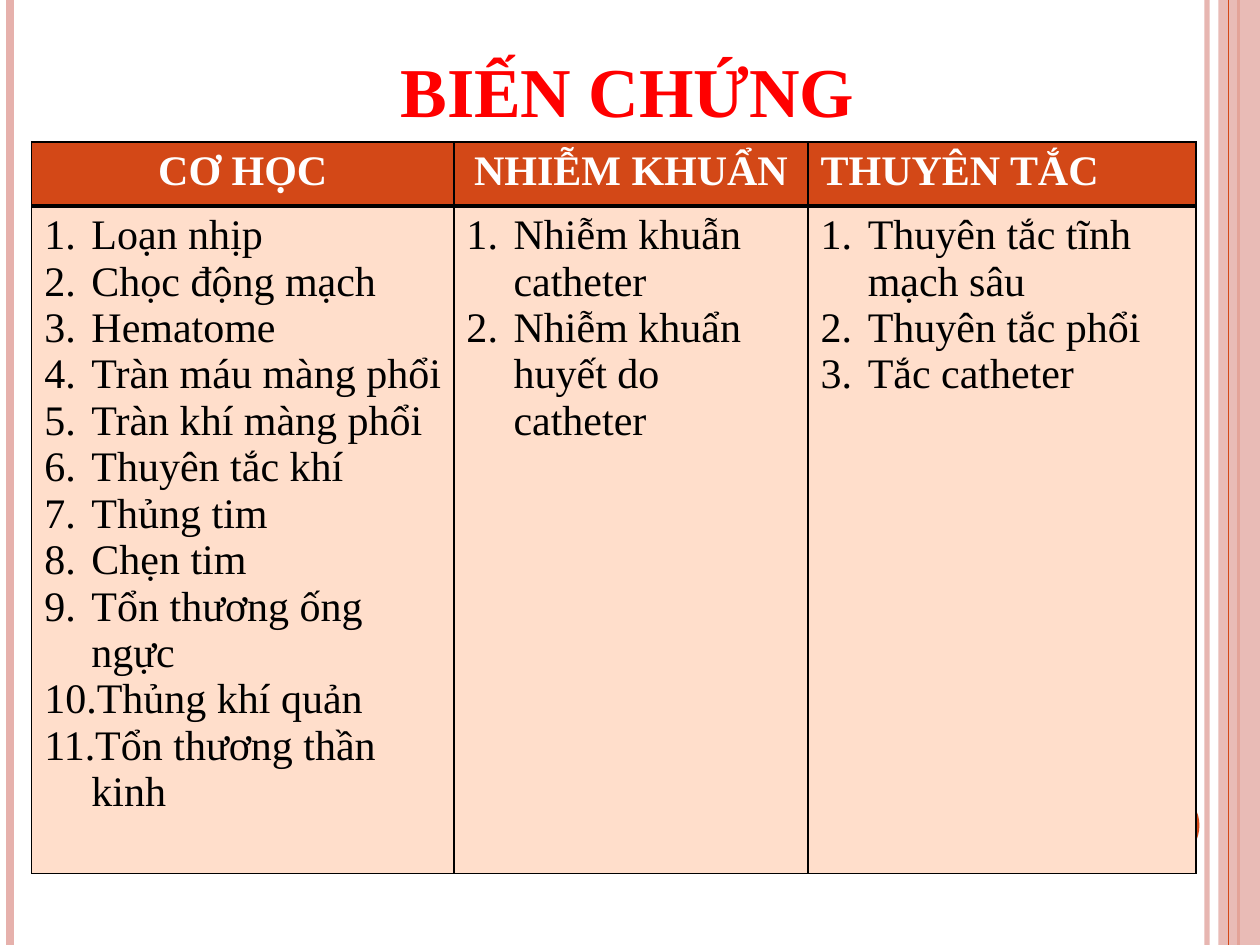
from dataclasses import dataclass

from lxml import etree
from pptx import Presentation
from pptx.dml.color import RGBColor
from pptx.enum.shapes import MSO_CONNECTOR, MSO_SHAPE
from pptx.enum.text import MSO_ANCHOR, MSO_AUTO_SIZE, PP_ALIGN
from pptx.oxml.ns import qn
from pptx.util import Cm, Pt

STRAIGHT = MSO_CONNECTOR.STRAIGHT
RECT, OVAL = MSO_SHAPE.RECTANGLE, MSO_SHAPE.OVAL
LEFT, CENTER = PP_ALIGN.LEFT, PP_ALIGN.CENTER
TOP = MSO_ANCHOR.TOP
NO_FIT = MSO_AUTO_SIZE.NONE

FONT = "Times New Roman"
PINK, ORANGE, PEACH = "E6B1AC", "D34817", "FFDECB"
BLACK, WHITE, RED = "000000", "FFFFFF", "FF0000"
WIDTH, HEIGHT = 25.4, 19.05
INDENT = Cm(0.95)


@dataclass
class Stripe:
    x: float
    color: str
    weight: float
    opacity: int = 100


@dataclass
class Column:
    width: float
    heading: str
    align: PP_ALIGN
    items: list[str]


LOWER_STRIPES = [
    Stripe(24.33, PINK, 3, 93),
    Stripe(0.2, PINK, 4.5),
    Stripe(24.97, ORANGE, 1.5),
]
UPPER_STRIPE = Stripe(24.77, ORANGE, 0.75)

COLUMNS = [
    Column(8.51, "CƠ HỌC", CENTER, [
        "Loạn nhịp", "Chọc động mạch", "Hematome", "Tràn máu màng phổi",
        "Tràn khí màng phổi", "Thuyên tắc khí", "Thủng tim", "Chẹn tim",
        "Tổn thương ống ngực", "Thủng khí quản", "Tổn thương thần kinh"]),
    Column(7.14, "NHIỄM KHUẨN", CENTER, [
        "Nhiễm khuẫn catheter", "Nhiễm khuẩn huyết do catheter"]),
    Column(7.82, "THUYÊN TẮC", LEFT, [
        "Thuyên tắc tĩnh mạch sâu", "Thuyên tắc phổi", "Tắc catheter"]),
]
ROW_HEIGHTS = [1.29, 13.46]


def rgb(color: str) -> RGBColor:
    return RGBColor.from_string(color)


def set_opacity(fill, percent: int) -> None:
    """Add an alpha value to the solid colour inside a shape's or line's XML."""
    color = fill.find(".//" + qn("a:srgbClr"))
    etree.SubElement(color, qn("a:alpha"), val=str(percent * 1000))


def add_stripe(s, stripe: Stripe) -> None:
    line = s.shapes.add_connector(
        STRAIGHT, Cm(stripe.x), 0, Cm(stripe.x), Cm(HEIGHT))
    line.line.color.rgb = rgb(stripe.color)
    line.line.width = Pt(stripe.weight)
    sp_pr = line._element.spPr
    if stripe.opacity < 100:
        set_opacity(sp_pr, stripe.opacity)
    etree.SubElement(sp_pr, qn("a:effectLst"))


def add_block(s, kind, x: float, y: float, w: float, h: float,
              color: str, opacity: int = 100) -> None:
    sp = s.shapes.add_shape(kind, Cm(x), Cm(y), Cm(w), Cm(h))
    sp.shadow.inherit = False
    sp.fill.solid()
    sp.fill.fore_color.rgb = rgb(color)
    sp.line.fill.background()
    if opacity < 100:
        set_opacity(sp._element.spPr, opacity)


def format_text(tf, size: float, color: str, bold: bool, align) -> None:
    for p in tf.paragraphs:
        p.alignment = align
        for r in p.runs:
            r.font.name = FONT
            r.font.size = Pt(size)
            r.font.bold = bold
            r.font.color.rgb = rgb(color)


def number_paragraphs(tf) -> None:
    for p in tf.paragraphs:
        p_pr = p._p.get_or_add_pPr()
        p_pr.set("marL", str(INDENT))
        p_pr.set("indent", str(-INDENT))
        etree.SubElement(p_pr, qn("a:buFont"), typeface="+mj-lt")
        etree.SubElement(p_pr, qn("a:buAutoNum"), type="arabicPeriod")


def set_borders(cell, top: float, bottom: float) -> None:
    tc_pr = cell._tc.get_or_add_tcPr()
    weights = {"a:lnL": 1, "a:lnR": 1, "a:lnT": top, "a:lnB": bottom}
    for i, (tag, weight) in enumerate(weights.items()):
        ln = etree.Element(qn(tag), w=str(Pt(weight)))
        fill = etree.SubElement(ln, qn("a:solidFill"))
        etree.SubElement(fill, qn("a:srgbClr"), val=BLACK)
        tc_pr.insert(i, ln)


def fill_cell(cell, text: str, fill: str, color: str, bold: bool,
              align) -> None:
    cell.text_frame.text = text
    format_text(cell.text_frame, 24, color, bold, align)
    cell.fill.solid()
    cell.fill.fore_color.rgb = rgb(fill)


def add_title(s, text: str) -> None:
    title = s.shapes.title
    title.left, title.top = Cm(7.82), Cm(0.84)
    title.width, title.height = Cm(9.96), Cm(1.96)
    tf = title.text_frame
    tf.text = text
    tf.word_wrap = True
    tf.auto_size = NO_FIT
    tf.vertical_anchor = TOP
    format_text(tf, 40, RED, True, LEFT)


def add_complications(s, columns: list[Column]) -> None:
    total = sum(c.width for c in columns)
    table = s.shapes.add_table(
        2, len(columns), Cm(0.64), Cm(2.86),
        Cm(total), Cm(sum(ROW_HEIGHTS))).table
    for row, height in zip(table.rows, ROW_HEIGHTS):
        row.height = Cm(height)
    for i, column in enumerate(columns):
        table.columns[i].width = Cm(column.width)
        head, body = table.cell(0, i), table.cell(1, i)
        fill_cell(head, column.heading, ORANGE, WHITE, True, column.align)
        set_borders(head, top=1, bottom=3)
        fill_cell(body, "\n".join(column.items), PEACH, BLACK, False, LEFT)
        number_paragraphs(body.text_frame)
        set_borders(body, top=3, bottom=1)


def main() -> None:
    prs = Presentation()
    prs.slide_width, prs.slide_height = Cm(WIDTH), Cm(HEIGHT)
    s = prs.slides.add_slide(prs.slide_layouts[5])

    # Side stripes and page-number disc
    for stripe in LOWER_STRIPES:
        add_stripe(s, stripe)
    add_block(s, RECT, 24.56, 0, 0.84, HEIGHT, PINK, 87)
    add_stripe(s, UPPER_STRIPE)
    add_block(s, OVAL, 22.66, 15.88, 1.52, 1.52, ORANGE)

    # Title and table
    add_title(s, "BIẾN CHỨNG")
    add_complications(s, COLUMNS)

    prs.save("out.pptx")


if __name__ == "__main__":
    main()
